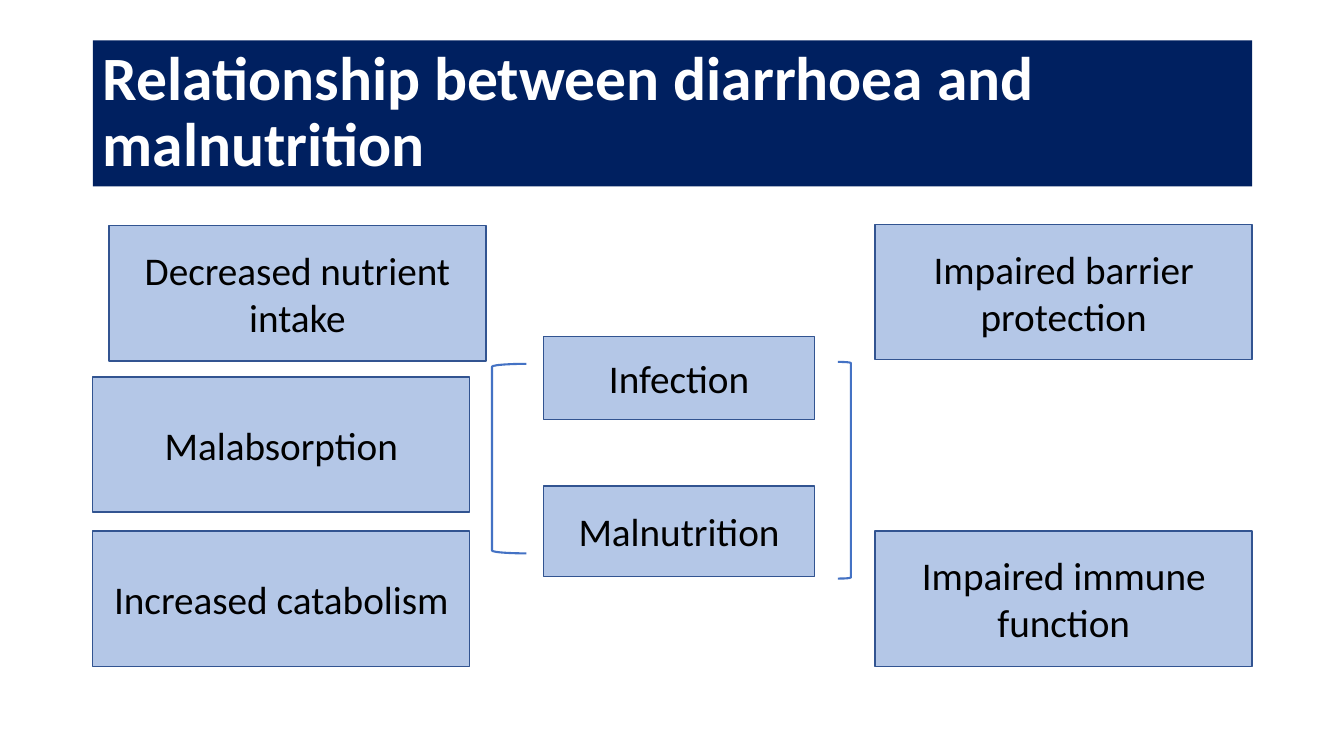
from pptx import Presentation
from pptx.dml.color import RGBColor
from pptx.enum.shapes import MSO_SHAPE as SHAPE
from pptx.enum.text import MSO_ANCHOR as ANCHOR, MSO_AUTO_SIZE as AUTO_SIZE, PP_ALIGN as ALIGN
from pptx.util import Pt

PX = 9144  # EMU per px, 100 px to the inch
NAVY = RGBColor(0x00, 0x20, 0x60)
PALE_BLUE = RGBColor(0xB4, 0xC7, 0xE7)
EDGE_BLUE = RGBColor(0x32, 0x54, 0x91)
BLUE = RGBColor(0x44, 0x72, 0xC4)
WHITE = RGBColor(0xFF, 0xFF, 0xFF)
BLACK = RGBColor(0x00, 0x00, 0x00)

LEFT, MIDDLE, RIGHT = 92, 539, 868
SIDE_W, SIDE_H, MIDDLE_W = 374, 134, 269


def add_outlined(kind, box, color, width):
    sp = s.shapes.add_shape(kind, *(v * PX for v in box))
    sp.shadow.inherit = False
    sp.line.color.rgb = color
    sp.line.width = Pt(width)
    return sp


def write(sp, text, size, color, align):
    tf = sp.text_frame
    tf.text = text
    tf.word_wrap = True
    tf.auto_size = AUTO_SIZE.NONE
    tf.vertical_anchor = ANCHOR.MIDDLE
    p = tf.paragraphs[0]
    p.alignment = align
    p.font.name = "Calibri"
    p.font.size = Pt(size)
    p.font.color.rgb = color
    return p


prs = Presentation()
prs.slide_width, prs.slide_height = 1333 * PX, 750 * PX
s = prs.slides.add_slide(prs.slide_layouts[5])

title = s.shapes.title
title.left, title.top, title.width, title.height = (v * PX for v in (LEFT, 40, 1150, 145))
title.fill.solid()
title.fill.fore_color.rgb = NAVY
p = write(title, "Relationship between diarrhoea and malnutrition", 44, WHITE, ALIGN.LEFT)
p.font.bold = True
p.line_spacing = 0.9

boxes = [
    ("Decreased nutrient intake", 108, 224, SIDE_W, SIDE_H),
    ("Malabsorption", LEFT, 374, SIDE_W, SIDE_H),
    ("Increased catabolism", LEFT, 527, SIDE_W, SIDE_H),
    ("Infection", MIDDLE, 334, MIDDLE_W, 82),
    ("Malnutrition", MIDDLE, 482, MIDDLE_W, 90),
    ("Impaired barrier protection", RIGHT, 223, SIDE_W, SIDE_H),
    ("Impaired immune function", RIGHT, 527, SIDE_W, SIDE_H),
]
for text, *box in boxes:
    sp = add_outlined(SHAPE.RECTANGLE, box, EDGE_BLUE, 1)
    sp.fill.solid()
    sp.fill.fore_color.rgb = PALE_BLUE
    write(sp, text, 28, BLACK, ALIGN.CENTER)

brackets = [
    (SHAPE.LEFT_BRACKET, (488, 361, 34, 188)),
    (SHAPE.RIGHT_BRACKET, (831, 359, 13, 215)),
]
for kind, box in brackets:
    add_outlined(kind, box, BLUE, 1.5).fill.background()

prs.save("out.pptx")
